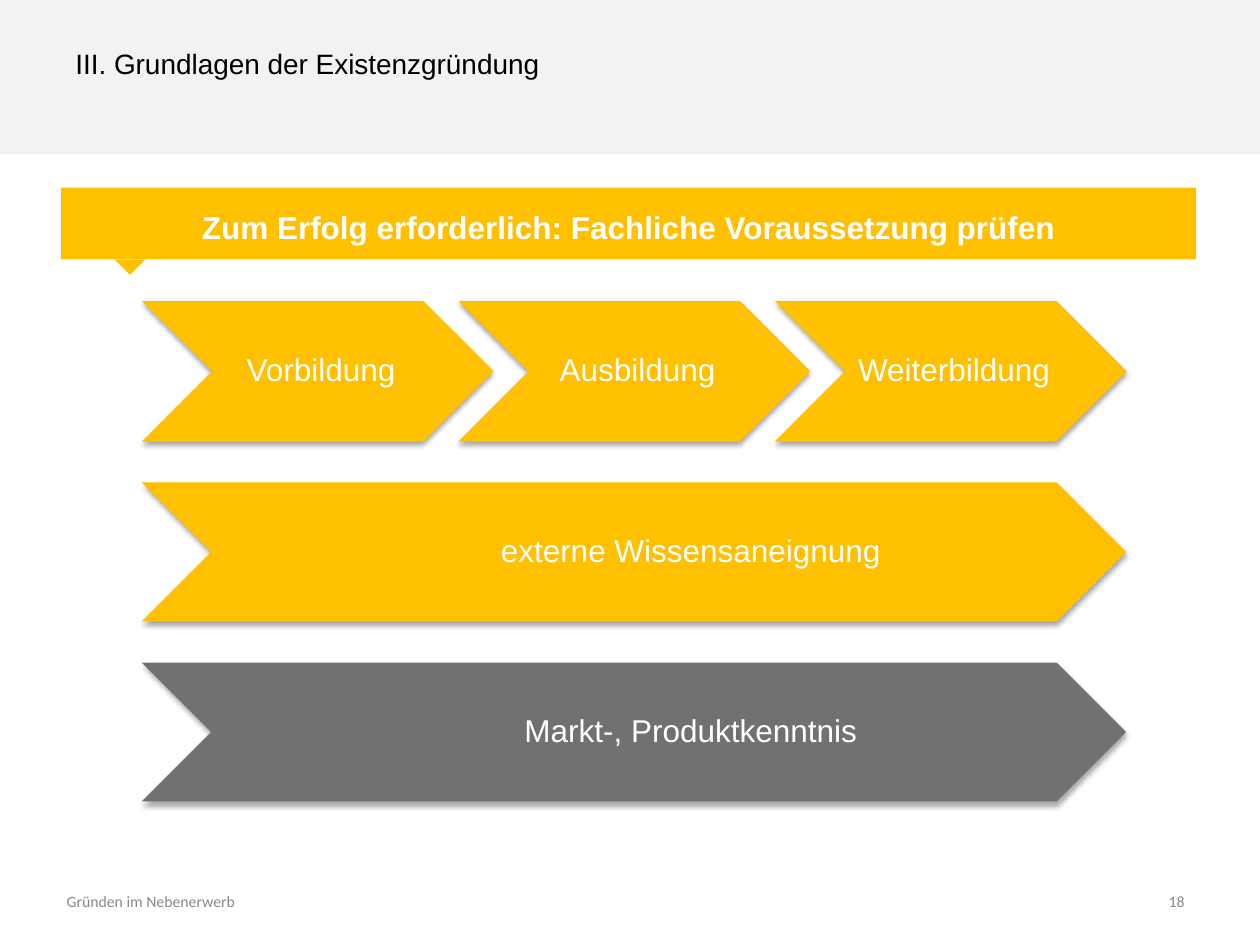
from lxml import etree
from pptx import Presentation
from pptx.dml.color import RGBColor
from pptx.enum.shapes import MSO_SHAPE
from pptx.enum.text import MSO_ANCHOR, PP_ALIGN
from pptx.oxml.ns import qn
from pptx.util import Pt

RECTANGLE, TRIANGLE, CHEVRON = MSO_SHAPE.RECTANGLE, MSO_SHAPE.ISOSCELES_TRIANGLE, MSO_SHAPE.CHEVRON
TOP, MIDDLE = MSO_ANCHOR.TOP, MSO_ANCHOR.MIDDLE
LEFT, CENTER, RIGHT = PP_ALIGN.LEFT, PP_ALIGN.CENTER, PP_ALIGN.RIGHT

COLORS = {
    "header": "F2F2F2",
    "accent": "FFC000",
    "gray": "707173",
    "white": "FFFFFF",
    "black": "000000",
    "muted": "898989",
}


class SlideBuilder:
    insets = (7.2, 3.6, 7.2, 3.6)

    def __init__(self, slide):
        self.slide = slide

    def label(self, shape, text, color, size, font="Arial", bold=False, align=LEFT,
              anchor=TOP, spacing=1.0, insets=insets):
        frame = shape.text_frame
        sides = ("margin_left", "margin_top", "margin_right", "margin_bottom")
        frame_format = {"word_wrap": True, "vertical_anchor": anchor}
        frame_format.update(zip(sides, map(Pt, insets)))
        paragraph = frame.paragraphs[0]
        paragraph.text = text
        formats = (
            (frame, frame_format),
            (paragraph, {"alignment": align, "line_spacing": spacing}),
            (paragraph.runs[0].font, {"name": font, "size": Pt(size), "bold": bold}),
        )
        for target, values in formats:
            for name, value in values.items():
                setattr(target, name, value)
        paragraph.runs[0].font.color.rgb = RGBColor.from_string(COLORS[color])

    def shape(self, kind, box, fill):
        shape = self.slide.shapes.add_shape(kind, *map(Pt, box))
        shape.shadow.inherit = False
        shape.fill.solid()
        shape.fill.fore_color.rgb = RGBColor.from_string(COLORS[fill])
        shape.line.fill.background()
        return shape

    def text(self, box, text, color, size, **style):
        self.label(self.slide.shapes.add_textbox(*map(Pt, box)), text, color, size, **style)

    def chevron(self, box, text, fill, left_inset):
        chevron = self.shape(CHEVRON, box, fill)
        effects = chevron._element.spPr.find(qn("a:effectLst"))
        shadow = etree.SubElement(effects, qn("a:outerShdw"), blurRad=str(Pt(3.1)),
                                  dist=str(Pt(1.8)), dir="5400000", rotWithShape="0")
        shade = etree.SubElement(shadow, qn("a:srgbClr"), val=COLORS["black"])
        etree.SubElement(shade, qn("a:alpha"), val="35000")
        self.label(chevron, text, "white", 18, align=CENTER, anchor=MIDDLE, spacing=0.9,
                   insets=(left_inset, 2, 2, 2))


def main():
    presentation = Presentation()
    presentation.slide_width, presentation.slide_height = Pt(720), Pt(540)
    builder = SlideBuilder(presentation.slides.add_slide(presentation.slide_layouts[6]))

    builder.shape(RECTANGLE, (0, 0, 720, 88), "header")
    builder.text((36, 23, 551.5, 46), "III. Grundlagen der Existenzgründung", "black", 16)

    pointer = builder.shape(TRIANGLE, (65.5, 148.3, 17.5, 8.8), "accent")
    pointer.rotation = 180
    banner = builder.shape(RECTANGLE, (35, 107.3, 648.5, 41), "accent")
    builder.label(banner, "Zum Erfolg erforderlich: Fachliche Voraussetzung prüfen", "white", 18,
                  bold=True, align=CENTER, anchor=MIDDLE, spacing=1.2)

    left, step = 81, 180.9
    for column, education in enumerate(("Vorbildung", "Ausbildung", "Weiterbildung")):
        builder.chevron((left + column * step, 172, 201, 80.3), education, "accent", 5.8)

    knowledge = (("externe Wissensaneignung", "accent"), ("Markt-, Produktkenntnis", "gray"))
    for row, (topic, fill) in enumerate(knowledge):
        builder.chevron((left, 275.7 + row * 102.9, 562.5, 79.4), topic, fill, 67)

    builder.text((31, 506, 437, 20), "Gründen im Nebenerwerb", "muted", 9, font="Calibri")
    builder.text((626.4, 500.4, 57.6, 28.8), "18", "muted", 9, font="Calibri",
                 align=RIGHT, anchor=MIDDLE)

    presentation.save("out.pptx")


if __name__ == "__main__":
    main()
